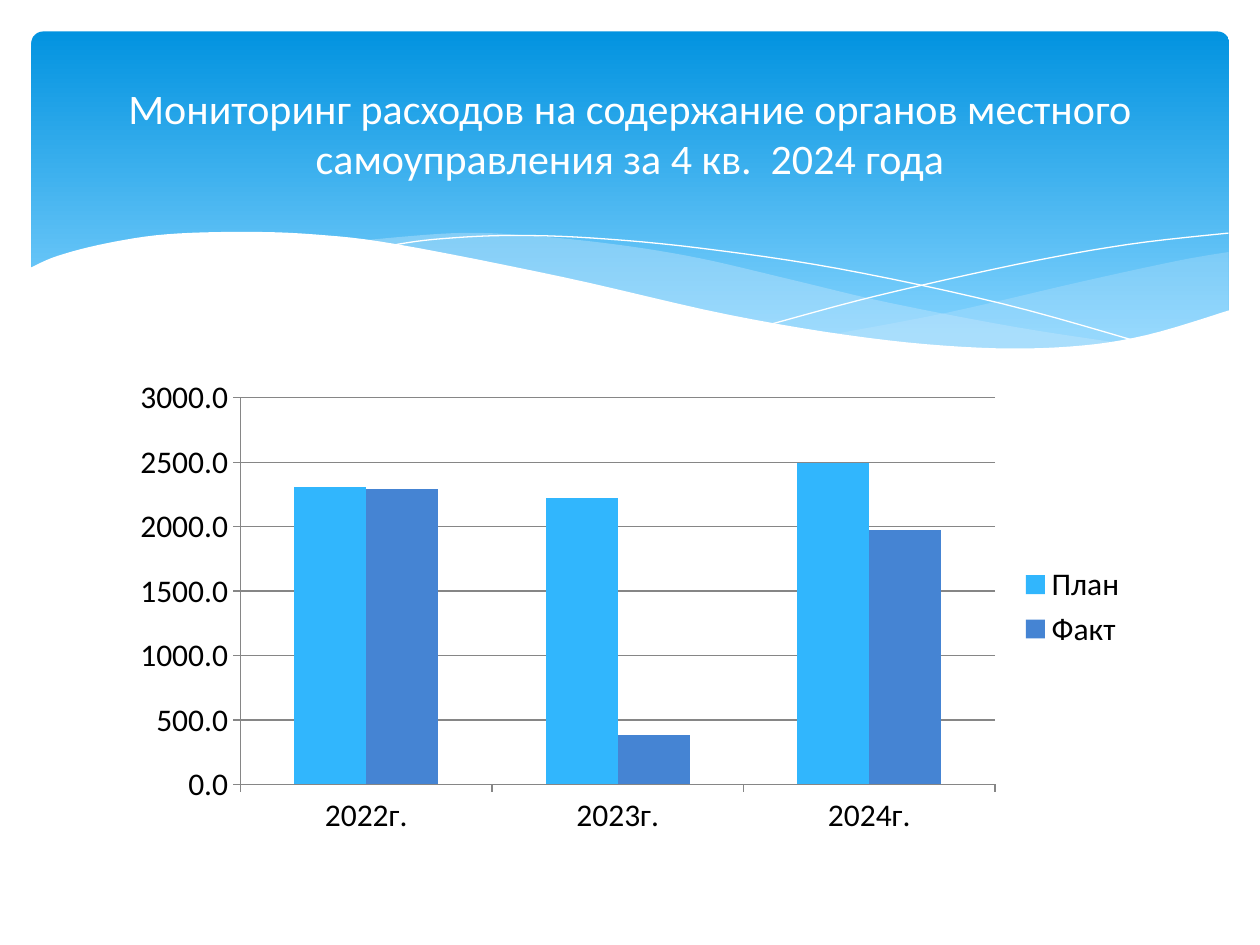
from dataclasses import dataclass
from typing import Optional

from lxml import etree
from pptx import Presentation
from pptx import util as u
from pptx.chart.data import CategoryChartData
from pptx.dml.color import RGBColor
from pptx.enum import chart as ch, shapes, text
from pptx.oxml.ns import qn

FONT = "Calibri"
Point = tuple[float, float]


@dataclass
class Wave:
    """A banner curve made of smooth edges, either filled or outlined."""

    edges: list[list[Point]]
    fill: Optional[str] = None
    opacity: int = 100
    line: Optional[str] = None


@dataclass
class Series:
    """One budget series with its yearly values."""

    name: str
    values: list[float]
    color: str


WAVES = [
    Wave([[(702, 144), (673, 149), (620, 160.5), (542, 178.5), (476, 191)],
          [(476, 191), (517.5, 196), (562, 199.4), (608, 199.2), (652, 193.5),
           (683, 185), (702, 178)]], "C6E7FC", 29),
    Wave([[(643, 196.5), (581, 187), (508, 173), (453, 160), (399.5, 147.5),
           (352, 139.7), (302.5, 134.6), (260, 133.2), (206, 137.5)],
          [(206, 137.5), (260.5, 146), (323, 160), (407.5, 178.5), (468, 190),
           (530, 198), (589, 200), (643, 196.5)]], "C6E7FC", 40),
    Wave([[(222.5, 140.4), (248, 136.8), (289, 134.6), (338, 136), (400, 141.8),
           (479, 153.5), (572.5, 173.5), (653, 196)]], line="FFFFFF"),
    Wave([[(441.5, 185), (500.5, 169.2), (580.5, 151.2), (644.5, 139.7),
           (702, 133.2)]], line="FFFFFF"),
    Wave([[(703.4, 177), (655, 191.5), (612, 198), (560, 198.7), (495.5, 193),
           (417, 180), (322, 158.4), (227.5, 139.7), (180, 134), (139, 132.5),
           (95, 133.9), (61, 139), (33, 146.2), (16.6, 153.4)],
          [(16.6, 153.4), (16.6, 237)], [(16.6, 237), (703.4, 237)]], "FFFFFF"),
]
YEARS = ["2022г.", "2023г.", "2024г."]
BUDGET = [Series("План", [2310, 2220, 2490], "31B6FD"),
          Series("Факт", [2290, 380, 1970], "4584D3")]


def paint(color_format, value: str) -> None:
    """Set a colour from a hex string."""
    color_format.rgb = RGBColor.from_string(value)


def smooth(knots: list[Point], steps: int = 6) -> list[Point]:
    """Return points of a Catmull-Rom curve through the knots."""
    if len(knots) == 2:
        return knots
    padded = [knots[0], *knots, knots[-1]]
    curve = [knots[0]]
    for a, b, c, d in zip(padded, padded[1:], padded[2:], padded[3:]):
        for t in (step / steps for step in range(1, steps + 1)):
            curve.append(tuple(
                q + t * (r - p) / 2 + t**2 * (p - 2.5 * q + 2 * r - s / 2)
                + t**3 * (3 * q - p - 3 * r + s) / 2
                for p, q, r, s in zip(a, b, c, d)))
    return curve


def draw_wave(slide, wave: Wave) -> None:
    """Draw a wave as a freeform."""
    points = [(u.Pt(x), u.Pt(y)) for edge in wave.edges for x, y in smooth(edge)]
    builder = slide.shapes.build_freeform(*points[0], scale=1.0)
    builder.add_line_segments(points[1:], close=wave.fill is not None)
    curve = builder.convert_to_shape()
    curve.shadow.inherit = False
    if wave.fill:
        curve.fill.solid()
        paint(curve.fill.fore_color, wave.fill)
        if wave.opacity < 100:
            color = curve.fill._xPr.find(qn("a:solidFill"))[0]
            etree.SubElement(color, qn("a:alpha")).set("val", str(wave.opacity * 1000))
    else:
        curve.fill.background()
    if wave.line:
        paint(curve.line.color, wave.line)
        curve.line.width = u.Pt(0)
    else:
        curve.line.fill.background()


def draw_banner(slide) -> None:
    """Draw the gradient banner with its waves."""
    banner = slide.shapes.add_shape(
        shapes.MSO_SHAPE.ROUNDED_RECTANGLE, u.Pt(18), u.Pt(18), u.Pt(684.5), u.Pt(194.5))
    banner.adjustments[0] = 0.034
    banner.shadow.inherit = False
    banner.line.fill.background()
    banner.fill.gradient()
    banner.fill.gradient_angle = 270
    for stop, position, color in zip(
            banner.fill.gradient_stops, (0, 0.9), ("0293E0", "83D3FE")):
        stop.position = position
        paint(stop.color, color)
    for wave in WAVES:
        draw_wave(slide, wave)


def draw_chart(slide) -> None:
    """Draw planned and actual spending by year."""
    data = CategoryChartData(number_format="0.0")
    data.categories = YEARS
    for series in BUDGET:
        data.add_series(series.name, series.values)
    spending = slide.shapes.add_chart(
        ch.XL_CHART_TYPE.COLUMN_CLUSTERED,
        u.Pt(68.5), u.Pt(211), u.Pt(583), u.Pt(271.5), data).chart
    spending.font.name, spending.font.size = FONT, u.Pt(18)
    paint(spending.font.color, "000000")
    spending.has_title = False
    spending.has_legend = True
    spending.legend.position = ch.XL_LEGEND_POSITION.RIGHT
    spending.legend.include_in_layout = False
    amounts, years = spending.value_axis, spending.category_axis
    amounts.minimum_scale, amounts.maximum_scale, amounts.major_unit = 0, 3000, 500
    amounts.tick_labels.number_format = "0.0"
    amounts.tick_labels.number_format_is_linked = False
    for axis in (amounts, years):
        axis.major_tick_mark = ch.XL_TICK_MARK.OUTSIDE
    for line in (amounts.format.line, years.format.line, amounts.major_gridlines.format.line):
        paint(line.color, "868686")
        line.width = u.Pt(0.75)
    plot = spending.plots[0]
    plot.gap_width, plot.overlap, plot.vary_by_categories = 150, 0, False
    for columns, series in zip(plot.series, BUDGET):
        columns.format.fill.solid()
        paint(columns.format.fill.fore_color, series.color)


def draw_title(slide) -> None:
    """Write the slide title over the banner."""
    title = slide.shapes.add_textbox(u.Pt(36), u.Pt(26.5), u.Pt(648), u.Pt(98.5)).text_frame
    title.word_wrap = True
    title.vertical_anchor = text.MSO_ANCHOR.MIDDLE
    title.text = ("Мониторинг расходов на содержание органов местного "
                  "самоуправления за 4 кв.  2024 года")
    heading = title.paragraphs[0]
    heading.alignment = text.PP_ALIGN.CENTER
    font = heading.runs[0].font
    font.name, font.size = FONT, u.Pt(24)
    paint(font.color, "FFFFFF")


def main() -> None:
    """Build and save the spending slide."""
    deck = Presentation()
    deck.slide_width, deck.slide_height = u.Pt(720), u.Pt(540)
    slide = deck.slides.add_slide(deck.slide_layouts[6])
    draw_banner(slide)
    draw_chart(slide)
    draw_title(slide)
    deck.save("out.pptx")


if __name__ == "__main__":
    main()
